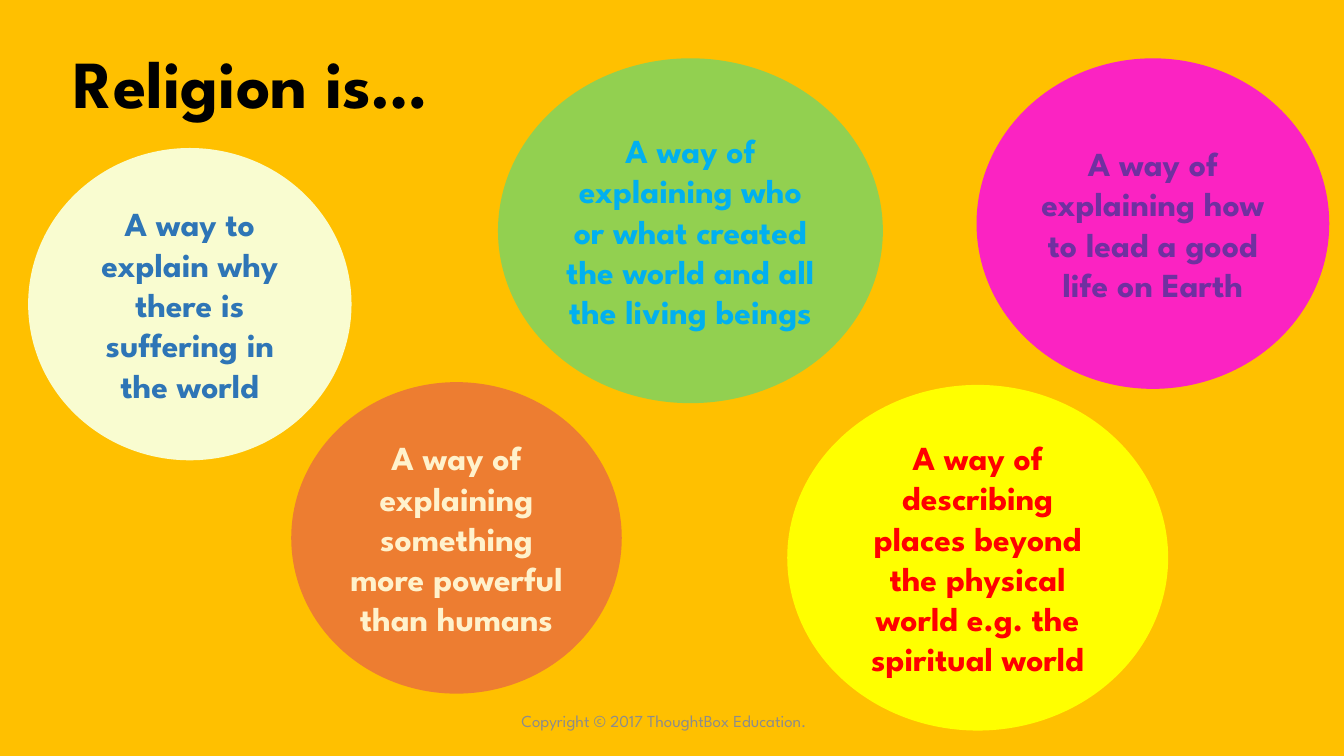
"""Build the slide 'Religion is…' with five coloured ovals."""
from pptx import Presentation
from pptx.dml.color import RGBColor
from pptx.enum.shapes import MSO_SHAPE as Shape
from pptx.enum.text import MSO_ANCHOR as Anchor, MSO_AUTO_SIZE as AutoSize, PP_ALIGN as Align
from pptx.util import Cm, Pt

FONT = "League Spartan"
AMBER = RGBColor(0xFF, 0xC0, 0x00)
BLACK = RGBColor(0x00, 0x00, 0x00)
GREY = RGBColor(0x8C, 0x8C, 0x8C)
PALE_YELLOW = RGBColor(0xF9, 0xFC, 0xD0)
BLUE = RGBColor(0x2E, 0x75, 0xB6)
ORANGE = RGBColor(0xED, 0x7D, 0x31)
CREAM = RGBColor(0xFF, 0xF2, 0xCC)
GREEN = RGBColor(0x92, 0xD0, 0x50)
SKY_BLUE = RGBColor(0x00, 0xB0, 0xF0)
YELLOW = RGBColor(0xFF, 0xFF, 0x00)
RED = RGBColor(0xFF, 0x00, 0x00)
PINK = RGBColor(0xFB, 0x23, 0xC2)
PURPLE = RGBColor(0x70, 0x30, 0xA0)

OVALS = [
    ("A way to explain why there is suffering in the world",
     (0.71, 3.73, 8.15, 7.87), PALE_YELLOW, BLUE),
    ("A way of explaining something more powerful than humans",
     (7.34, 9.63, 8.33, 7.85), ORANGE, CREAM),
    ("A way of explaining who or what created the world and all the living beings",
     (12.55, 1.47, 9.7, 8.69), GREEN, SKY_BLUE),
    ("A way of describing places beyond the physical world e.g. the spiritual world",
     (19.84, 9.7, 9.6, 8.71), YELLOW, RED),
    ("A way of explaining how to lead a good life on Earth",
     (24.61, 1.47, 8.89, 8.33), PINK, PURPLE),
]


def write_text(shape, text, size, color, bold=True, align=Align.CENTER, anchor=Anchor.MIDDLE):
    """Put one formatted paragraph into a shape and return it."""
    frame = shape.text_frame
    frame_format = {"word_wrap": True, "auto_size": AutoSize.NONE, "vertical_anchor": anchor}
    for name, value in frame_format.items():
        setattr(frame, name, value)
    paragraph = frame.paragraphs[0]
    paragraph.alignment = align
    run = paragraph.add_run()
    run.text = text
    run.font.color.rgb = color
    for name, value in {"name": FONT, "size": Pt(size), "bold": bold}.items():
        setattr(run.font, name, value)
    return paragraph


presentation = Presentation()
presentation.slide_width = Cm(33.87)
presentation.slide_height = Cm(19.05)
slide = presentation.slides.add_slide(presentation.slide_layouts[5])
slide.background.fill.solid()
slide.background.fill.fore_color.rgb = AMBER

title = slide.shapes.title
title_place = {"left": 1.6, "top": 0.97, "width": 29.21, "height": 2.26}
for name, value in title_place.items():
    setattr(title, name, Cm(value))
heading = write_text(title, "Religion is…", 48, BLACK, align=Align.LEFT, anchor=Anchor.BOTTOM)
heading.line_spacing = 0.9

copyright_box = slide.shapes.add_textbox(Cm(11.23), Cm(17.65), Cm(11.43), Cm(1.02))
copyright_box.text_frame.margin_right = Cm(0.66)
write_text(copyright_box, "Copyright © 2017 ThoughtBox Education.", 12, GREY, bold=False)

for text, place, fill_color, text_color in OVALS:
    oval = slide.shapes.add_shape(Shape.OVAL, *map(Cm, place))
    oval.shadow.inherit = False
    oval.fill.solid()
    oval.fill.fore_color.rgb = fill_color
    oval.line.fill.background()
    write_text(oval, text, 24, text_color)

presentation.save("out.pptx")
